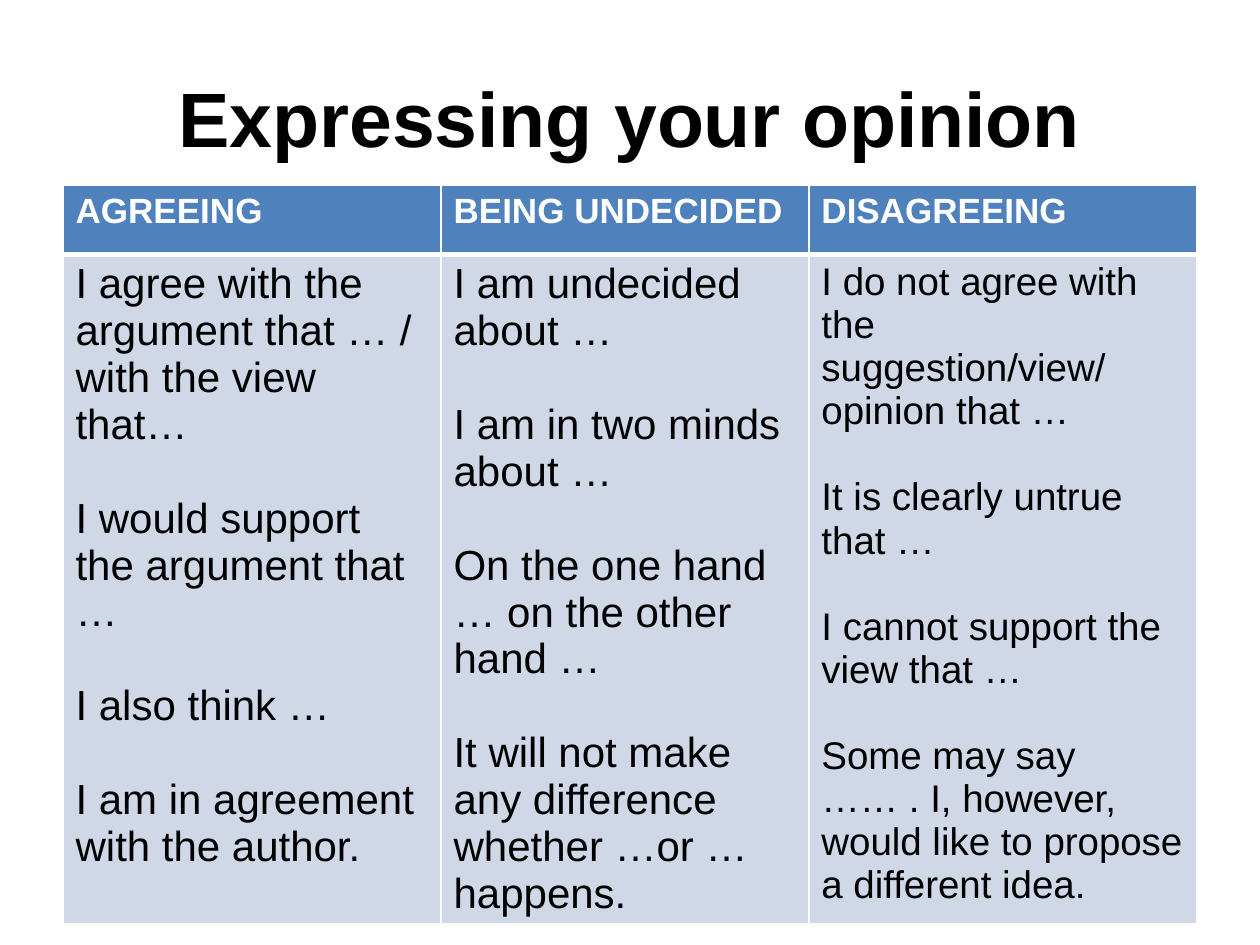
from pptx import Presentation
from pptx.dml.color import RGBColor
from pptx.enum.text import MSO_ANCHOR, PP_ALIGN
from pptx.oxml.ns import qn
from pptx.util import Pt
from lxml.etree import SubElement

BLACK = RGBColor(0x00, 0x00, 0x00)
WHITE = RGBColor(0xFF, 0xFF, 0xFF)
BLUE = RGBColor(0x4F, 0x81, 0xBD)
PALE = RGBColor(0xD0, 0xD8, 0xE8)

# Heading, column width, text size, groups of paragraphs
COLUMNS = [
    ("AGREEING", 216, 24, [
        ["I agree with the argument that … /", "with the view that…"],
        ["I would support the argument that …"],
        ["I also think …"],
        ["I am in agreement with the author."],
    ]),
    ("BEING UNDECIDED", 210.24, 24, [
        ["I am undecided about …"],
        ["I am in two minds about …"],
        ["On the one hand … on the other hand …"],
        ["It will not make any difference whether …or … happens."],
    ]),
    ("DISAGREEING", 221.76, 22, [
        ["I do not agree with the", "suggestion/view/opinion that …"],
        ["It is clearly untrue that …"],
        ["I cannot support the view that …"],
        ["Some may say …… . I, however, would like to propose a different idea."],
    ]),
]
ROW_HEIGHTS = (39.6, 334)


class Deck:
    font = "Arial"
    line_spacing = 1.12  # height of one line relative to the text size

    def __init__(self, prs):
        self.slide = prs.slides.add_slide(prs.slide_layouts[5])

    def run(self, p, text, size, color, bold=False):
        r = p.add_run()
        r.text = text
        r.font.name = self.font
        r.font.size = Pt(size)
        r.font.bold = bold
        r.font.color.rgb = color

    def title(self, text, left, top, width, height):
        sp = self.slide.shapes.title
        sp.left, sp.top, sp.width, sp.height = map(Pt, (left, top, width, height))
        tf = sp.text_frame
        tf.vertical_anchor = MSO_ANCHOR.MIDDLE
        p = tf.paragraphs[0]
        p.alignment = PP_ALIGN.CENTER
        self.run(p, text, 44, BLACK, bold=True)

    def borders(self, cell, **widths):
        tc_pr = cell._tc.get_or_add_tcPr()
        for side in "LRTB":
            ln = SubElement(tc_pr, qn(f"a:ln{side}"), w=str(Pt(widths.get(side, 1))))
            fill = SubElement(ln, qn("a:solidFill"))
            SubElement(fill, qn("a:srgbClr"), val=str(WHITE))

    def cell(self, cell, groups, size, color, fill, bold=False, **widths):
        """Fill a cell with groups of paragraphs set one line apart."""
        self.borders(cell, **widths)
        cell.fill.solid()
        cell.fill.fore_color.rgb = fill
        tf = cell.text_frame
        for g, group in enumerate(groups):
            for i, text in enumerate(group):
                p = tf.add_paragraph() if g or i else tf.paragraphs[0]
                if g and i == 0:
                    p.space_before = Pt(round(size * self.line_spacing, 1))
                self.run(p, text, size, color, bold)

    def table(self, columns, left, top):
        width = sum(column[1] for column in columns)
        frame = self.slide.shapes.add_table(
            len(ROW_HEIGHTS), len(columns),
            Pt(left), Pt(top), Pt(width), Pt(sum(ROW_HEIGHTS)))
        table = frame.table
        for row, height in zip(table.rows, ROW_HEIGHTS):
            row.height = Pt(height)
        for c, (heading, col_width, size, groups) in enumerate(columns):
            table.columns[c].width = Pt(col_width)
            self.cell(table.cell(0, c), [[heading]], 20, WHITE, BLUE, bold=True, B=3)
            self.cell(table.cell(1, c), groups, size, BLACK, PALE, T=3)


def main():
    prs = Presentation()
    prs.slide_width, prs.slide_height = Pt(720), Pt(540)
    deck = Deck(prs)
    deck.title("Expressing your opinion", 36, 21.6, 648, 90)
    deck.table(COLUMNS, 36, 105.84)
    prs.save("out.pptx")


if __name__ == "__main__":
    main()
